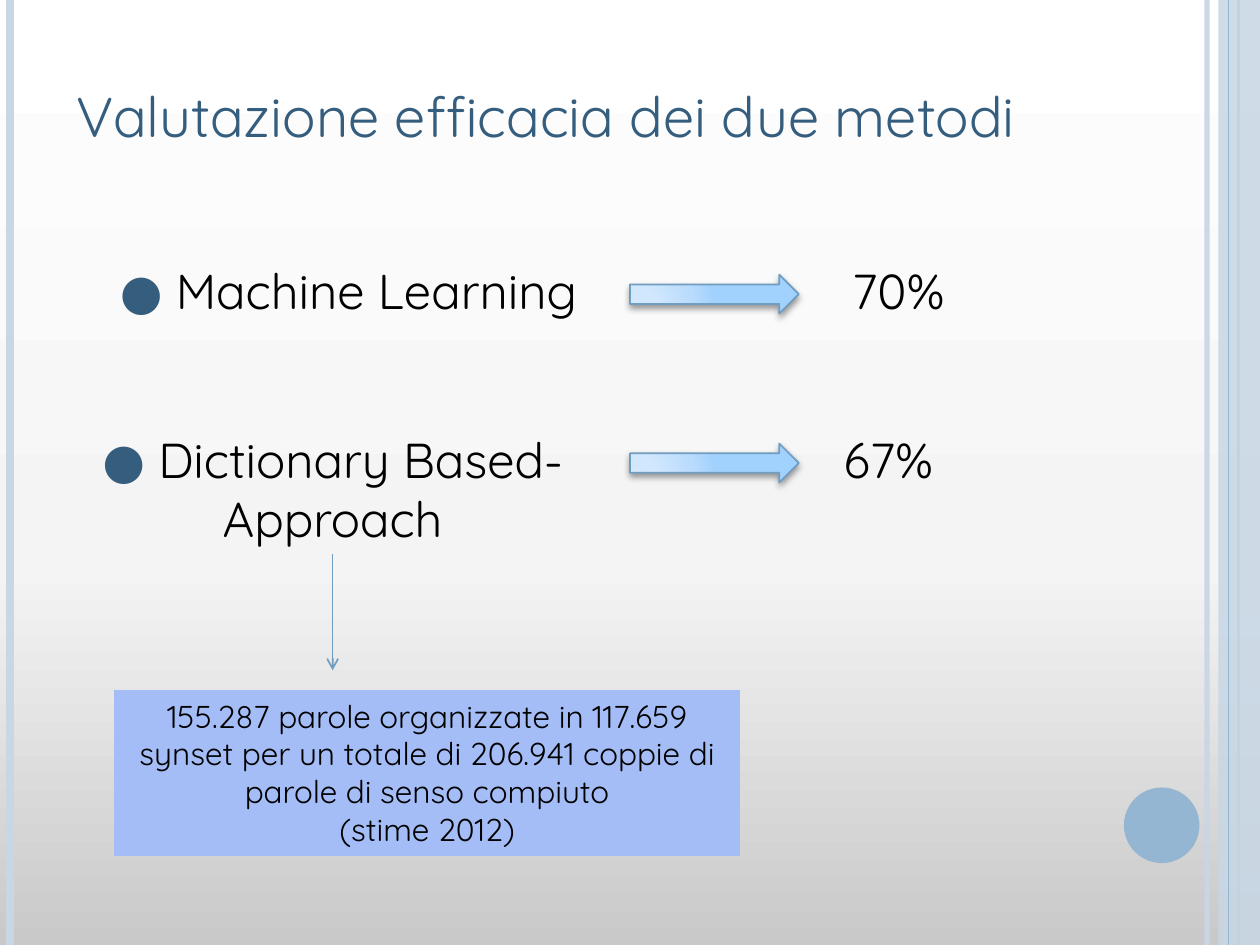
from lxml.etree import SubElement
from pptx import Presentation
from pptx.dml.color import RGBColor
from pptx.enum.shapes import MSO_CONNECTOR, MSO_SHAPE
from pptx.enum.text import MSO_ANCHOR, PP_ALIGN
from pptx.oxml.ns import qn
from pptx.util import Inches, Pt

# Content
FONT = "Quicksand"
BLUE, BLACK = "355D7E", "000000"
TITLE = "Valutazione efficacia dei due metodi"
# method, its left and width and height, score, score left
METHODS = [
    ("Machine Learning", (0.64, 4.25, 0.57), "70%", 6.42),
    ("Dictionary Based-Approach", (0.28, 4.72, 1.04), "67%", 6.34),
]
NOTE = [
    "155.287 parole organizzate in 117.659 synset per un totale di "
    "206.941 coppie di parole di senso compiuto",
    "(stime 2012)",
]
BG_STOPS = [(0, "C9C9C9"), (40, "F4F4F4"), (100, "FFFFFF")]
ARROW_STOPS = [(0, "D5E9FD"), (30, "D1E7FD"), (75, "B9DBFC"), (100, "A1D1FD")]

# Layout
W, H = 10, 7.5
ROW_TOP, ROW_STEP = 2.02, 1.34
ARROW_X, ARROW_W, ARROW_H, ARROW_DROP = 5, 1.34, 0.31, 0.16

prs = Presentation()
prs.slide_width, prs.slide_height = Inches(W), Inches(H)
s = prs.slides.add_slide(prs.slide_layouts[6])


def rgb(value):
    return RGBColor.from_string(value)


def child(parent, tag, **attrs):
    return SubElement(parent, qn(tag), {k: str(v) for k, v in attrs.items()})


def set_alpha(element, percent):
    for color in element.iter(qn("a:srgbClr")):
        child(color, "a:alpha", val=percent * 1000)


def set_gradient(fill, owner, stops):
    """Fill with the stops and return the gradient, ready for its direction."""
    fill.gradient()
    grad = next(owner.iter(qn("a:gradFill")))
    for old in list(grad):
        grad.remove(old)
    stop_list = child(grad, "a:gsLst")
    for pos, color in stops:
        child(child(stop_list, "a:gs", pos=pos * 1000), "a:srgbClr", val=color)
    return grad


def add_line(x1, y1, x2, y2, color, width):
    c = s.shapes.add_connector(MSO_CONNECTOR.STRAIGHT, *map(Inches, (x1, y1, x2, y2)))
    c.line.color.rgb, c.line.width = rgb(color), Pt(width)
    child(c.element.spPr, "a:effectLst")
    return c


def add_shape(kind, x, y, w, h, fill=None, line=None, width=0.75):
    sp = s.shapes.add_shape(kind, *map(Inches, (x, y, w, h)))
    sp.shadow.inherit = False
    if fill:
        sp.fill.solid()
        sp.fill.fore_color.rgb = rgb(fill)
    if line:
        sp.line.color.rgb, sp.line.width = rgb(line), Pt(width)
    else:
        sp.line.fill.background()
    return sp


def write(sp, paragraphs, size, align=PP_ALIGN.CENTER):
    """Each paragraph is a list of (text, colour) runs."""
    tf = sp.text_frame
    tf.word_wrap = True
    for i, runs in enumerate(paragraphs):
        p = tf.paragraphs[0] if i == 0 else tf.add_paragraph()
        p.alignment = align
        for text, color in runs:
            r = p.add_run()
            r.text = text
            r.font.name, r.font.size = FONT, Pt(size)
            r.font.color.rgb = rgb(color)


def add_text(x, y, w, h, runs, size, align=PP_ALIGN.CENTER):
    write(s.shapes.add_textbox(*map(Inches, (x, y, w, h))), [runs], size, align)


def add_block_arrow(y):
    sp = add_shape(MSO_SHAPE.RIGHT_ARROW, ARROW_X, y, ARROW_W, ARROW_H,
                   line="719DC1", width=1)
    spPr = sp.element.spPr
    grad = set_gradient(sp.fill, spPr, ARROW_STOPS)
    child(child(grad, "a:path", path="circle"), "a:fillToRect",
          l=5000, t=100000, r=120000, b=10000)
    shadow = child(spPr.find(qn("a:effectLst")), "a:outerShdw", blurRad=Pt(4),
                   dist=Pt(2), dir=5400000, rotWithShape=0)
    child(shadow, "a:srgbClr", val=BLACK)
    set_alpha(shadow, 40)


# Background, light at the top
bg = set_gradient(s.background.fill, s.element, BG_STOPS)
child(bg, "a:lin", ang=270 * 60000, scaled=0)

# Side stripes and circle
edge = add_line(9.58, 0, 9.58, H, "C8D7E5", 3)
set_alpha(edge.element.spPr, 93)
add_line(0.08, 0, 0.08, H, "C8D7E5", 4.5)
add_line(9.83, 0, 9.83, H, "94B6D2", 1.5)
band = add_shape(MSO_SHAPE.RECTANGLE, 9.67, 0, 0.33, H, "C8D7E5")
set_alpha(band.element.spPr, 87)
add_line(9.75, 0, 9.75, H, "94B6D2", 0.75)
add_shape(MSO_SHAPE.OVAL, 8.92, 6.25, 0.6, 0.6, "94B6D2")

# Title
add_text(0.51, 0.6, 9.13, 0.64, [(TITLE, BLUE)], 32, PP_ALIGN.LEFT)

# Methods with their scores
for i, (method, (x, w, h), score, score_x) in enumerate(METHODS):
    y = ROW_TOP + i * ROW_STEP
    add_text(x, y, w, h, [("● ", BLUE), (method, BLACK)], 28)
    add_block_arrow(y + ARROW_DROP)
    add_text(score_x, y, 1.42, 0.57, [(score, BLACK)], 28)

# Arrow down to the note
down = add_line(2.64, 4.4, 2.64, 5.32, "719DC1", 1)
child(down.line._get_or_add_ln(), "a:tailEnd", type="arrow")
note = add_shape(MSO_SHAPE.RECTANGLE, 0.91, 5.48, 4.96, 1.31, "A4BDF6", "A4BDF6")
note.text_frame.vertical_anchor = MSO_ANCHOR.TOP
write(note, [[(text, BLACK)] for text in NOTE], 18)

prs.save("out.pptx")
